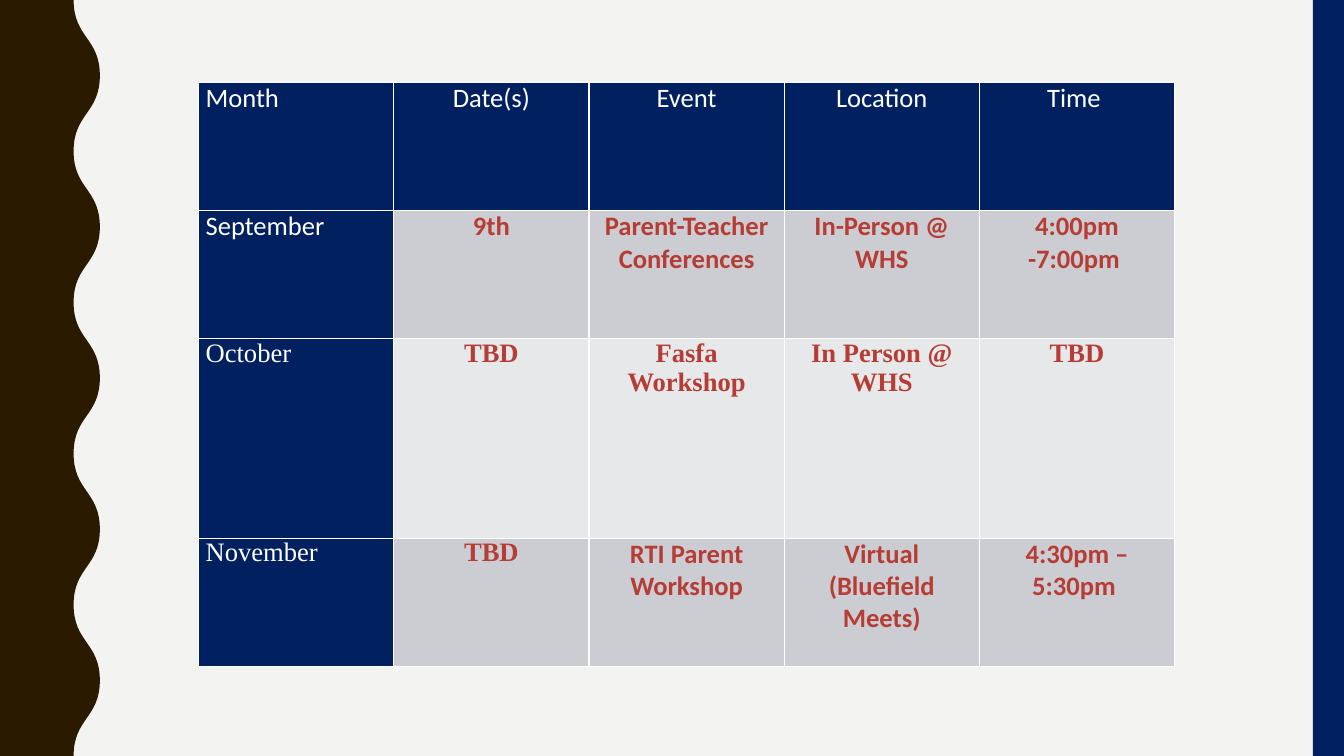
import pptx
import pptx.util
import pptx.dml.color
import pptx.enum.shapes
import pptx.enum.text
import pptx.oxml
import pptx.oxml.ns

Inches = pptx.util.Inches
W, H = 13.33, 7.5
NAVY, BROWN, RED, WHITE = "002060", "2A1A00", "B63D35", "FFFFFF"
BANDS = ["CCCDD2", "E7E8EA"]
SANS, SERIF = "Calibri", "Times New Roman"
NS = pptx.oxml.ns.nsdecls("a")
qn = pptx.oxml.ns.qn


def paint(fill, color):
    fill.solid()
    fill.fore_color.rgb = pptx.dml.color.RGBColor.from_string(color)


prs = pptx.Presentation()
prs.slide_width, prs.slide_height = Inches(W), Inches(H)
slide = prs.slides.add_slide(prs.slide_layouts[6])
paint(slide.background.fill, "F3F3F2")

bar_w = 0.31
bar = slide.shapes.add_shape(pptx.enum.shapes.MSO_SHAPE.RECTANGLE,
                             Inches(W - bar_w), 0, Inches(bar_w), Inches(H))

trough, crest, halves = 0.73, 0.99, 10
turns = [(Inches(crest if i % 2 else trough), Inches(H * i / halves))
         for i in range(halves + 1)]
fb = slide.shapes.build_freeform(*turns[0])
fb.add_line_segments(turns[1:] + [(0, Inches(H)), (0, 0)], close=True)
wave = fb.convert_to_shape()
segments = list(wave._element.iter(qn("a:lnTo")))[:halves]
for (x0, y0), (x1, y1), seg in zip(turns, turns[1:], segments):
    mid = (y0 + y1) // 2
    pts = "".join(f'<a:pt x="{x}" y="{y}"/>' for x, y in ((x0, mid), (x1, mid), (x1, y1)))
    seg.getparent().replace(seg, pptx.oxml.parse_xml(
        f'<a:cubicBezTo {NS}>{pts}</a:cubicBezTo>'))

for sp, color in ((bar, NAVY), (wave, BROWN)):
    sp.shadow.inherit = False
    sp.line.fill.background()
    paint(sp.fill, color)

rows = [
    ["Month", "Date(s)", "Event", "Location", "Time "],
    ["September", "9th", "Parent-Teacher Conferences", "In-Person @ WHS", "4:00pm -7:00pm "],
    ["October", "TBD", "Fasfa Workshop", "In Person @ WHS", "TBD"],
    ["November", "TBD", "RTI Parent Workshop", "Virtual (Bluefield Meets)", "4:30pm – 5:30pm "],
]
serif_cells = {(2, c) for c in range(5)} | {(3, 0), (3, 1)}
heights = [1.27, 1.27, 1.98, 1.27]
table_w = 9.68

table = slide.shapes.add_table(len(rows), len(rows[0]), Inches(1.97), Inches(0.82),
                               Inches(table_w), Inches(sum(heights))).table
for col in table.columns:
    col.width = Inches(table_w / len(rows[0]))
for row, height in zip(table.rows, heights):
    row.height = Inches(height)

margins = {"margin_left": Inches(0.07), "margin_right": Inches(0.07),
           "margin_top": 0, "margin_bottom": 0}
for r, texts in enumerate(rows):
    for c, text in enumerate(texts):
        cell = table.cell(r, c)
        heading = r == 0 or c == 0
        for name, value in margins.items():
            setattr(cell, name, value)
        for side in "LRTB":
            cell._tc.get_or_add_tcPr().append(pptx.oxml.parse_xml(
                f'<a:ln{side} {NS} w="{pptx.util.Pt(1)}"><a:solidFill>'
                f'<a:srgbClr val="{WHITE}"/></a:solidFill></a:ln{side}>'))
        paint(cell.fill, NAVY if heading else BANDS[(r - 1) % 2])
        p = cell.text_frame.paragraphs[0]
        p.alignment = pptx.enum.text.PP_ALIGN.CENTER if c else pptx.enum.text.PP_ALIGN.LEFT
        run = p.add_run()
        run.text = text
        style = {"size": pptx.util.Pt(19), "bold": not heading,
                 "name": SERIF if (r, c) in serif_cells else SANS}
        for name, value in style.items():
            setattr(run.font, name, value)
        paint(run.font.fill, WHITE if heading else RED)

prs.save("out.pptx")
